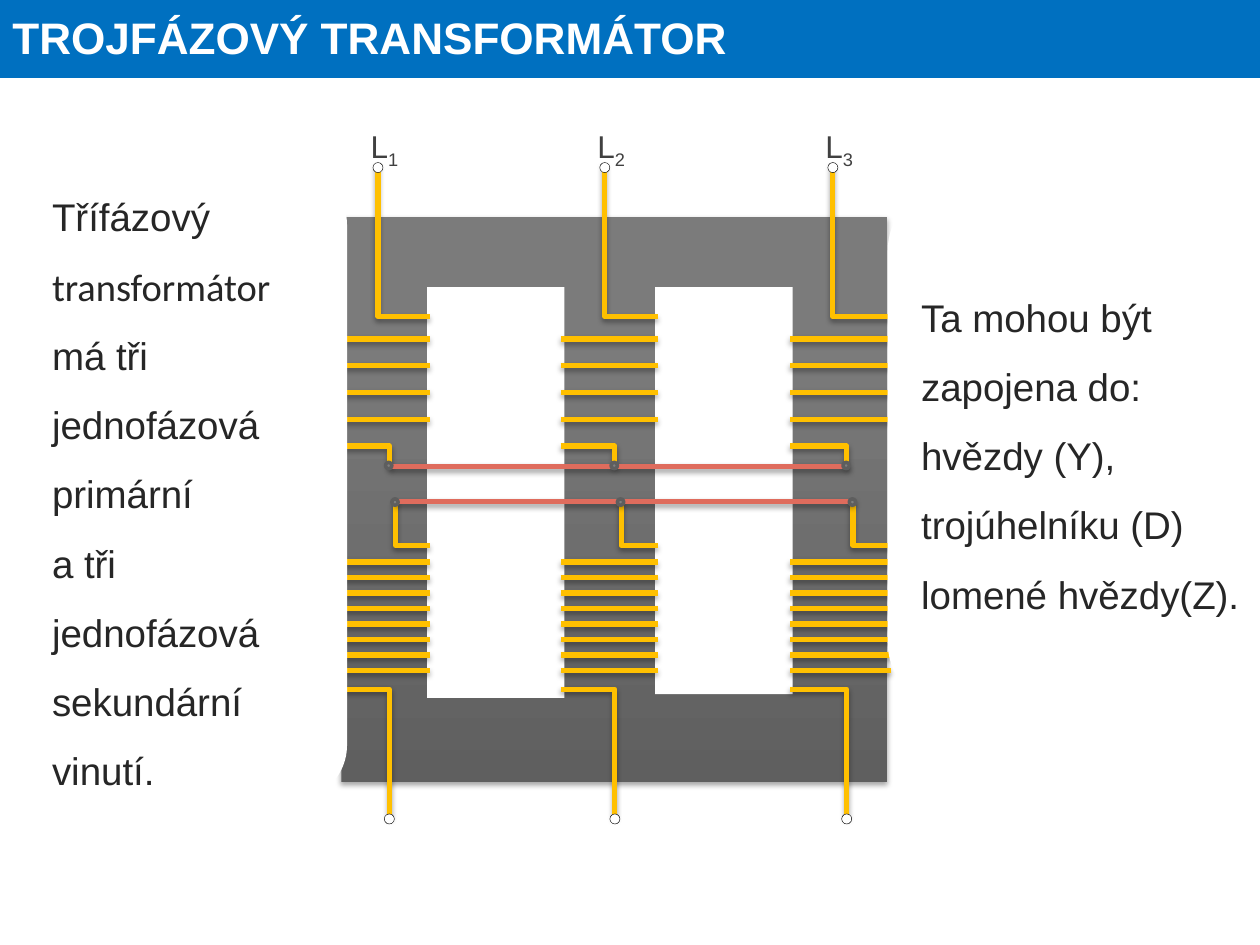
"""Build the slide about the windings of a three-phase transformer."""
from lxml.etree import SubElement
from pptx import Presentation
from pptx.dml.color import RGBColor
from pptx.enum.shapes import MSO_CONNECTOR, MSO_SHAPE
from pptx.enum.text import MSO_ANCHOR, PP_ALIGN
from pptx.oxml.ns import qn
from pptx.util import Inches, Pt

hex_color = RGBColor.from_string
COPPER, NEUTRAL, WHITE = "FFC000", "DF6C5D", "FFFFFF"

deck = Presentation()
deck.slide_width, deck.slide_height = Inches(10), Inches(7.5)
slide = deck.slides.add_slide(deck.slide_layouts[6])
shapes = slide.shapes


def add_block(kind, box, fill, outline=None, weight=0):
    block = shapes.add_shape(kind, *map(Inches, box))
    block.shadow.inherit = False
    block.fill.solid()
    block.fill.fore_color.rgb = hex_color(fill)
    if outline:
        block.line.color.rgb = hex_color(outline)
        block.line.width = Pt(weight)
    else:
        block.line.fill.background()
    return block


def cast_shadow(part):
    properties = part._element.spPr
    effects = properties.find(qn("a:effectLst"))
    if effects is None:
        effects = SubElement(properties, qn("a:effectLst"))
    outer = SubElement(effects, qn("a:outerShdw"), blurRad=str(Pt(3.1)),
                       dist=str(Pt(1.8)), dir="5400000", rotWithShape="0")
    tint = SubElement(outer, qn("a:srgbClr"), val="000000")
    SubElement(tint, qn("a:alpha"), val="35000")


core = add_block(MSO_SHAPE.RECTANGLE, (2.71, 1.72, 4.33, 4.49), "5F5F5F")
core.fill.gradient()
core.fill.gradient_angle = 90
for stop, color, position in zip(core.fill.gradient_stops, ("5F5F5F", "7B7B7B"), (0, 0.8)):
    stop.color.rgb = hex_color(color)
    stop.position = position
cast_shadow(core)
for left, height in ((3.39, 3.26), (5.2, 3.23)):
    add_block(MSO_SHAPE.RECTANGLE, (left, 2.28, 1.09, height), WHITE)

phases = [
    (2.67, 3.41, 3.0, 3.09, 3.14),
    (4.45, 5.22, 4.8, 4.88, 4.93),
    (6.27, 7.07, 6.61, 6.72, 6.77),
]
turn_rows = [2.69 + 0.213 * i for i in range(4)] + [4.46 + 0.123 * i for i in range(8)]
wires = []
for left, right, inlet, outlet, star in phases:
    wires += [(COPPER, [(left, y), (right, y)]) for y in turn_rows]
    wires += [
        (COPPER, [(right, 2.51), (inlet, 2.51), (inlet, 1.3)]),
        (COPPER, [(left, 3.54), (outlet, 3.54), (outlet, 3.71)]),
        (COPPER, [(right, 4.33), (star, 4.33), (star, 3.97)]),
        (COPPER, [(left, 5.47), (outlet, 5.47), (outlet, 6.49)]),
    ]
wires += [(NEUTRAL, [(3.09, 3.7), (6.74, 3.7)]), (NEUTRAL, [(3.13, 3.98), (6.79, 3.98)])]

for color, points in wires:
    start, *bends = [(Inches(x), Inches(y)) for x, y in points]
    if len(bends) == 1:
        wire = shapes.add_connector(MSO_CONNECTOR.STRAIGHT, *start, *bends[0])
    else:
        outline = shapes.build_freeform(*start)
        outline.add_line_segments(bends, close=False)
        wire = outline.convert_to_shape()
        wire.fill.background()
    wire.line.color.rgb = hex_color(color)
    wire.line.width = Pt(3)
    cast_shadow(wire)

for number, (left, right, inlet, outlet, star) in enumerate(phases, 1):
    for x, y in ((inlet, 1.33), (outlet, 6.5)):
        add_block(MSO_SHAPE.OVAL, (x - 0.04, y - 0.04, 0.08, 0.08), WHITE, "000000", 0.25)
    for x, y in ((outlet, 3.7), (star, 3.99)):
        add_block(MSO_SHAPE.OVAL, (x - 0.03, y - 0.03, 0.05, 0.05), "7F7F7F", "5E5E5E", 2)

    label = shapes.add_textbox(*map(Inches, (inlet - 0.26, 0.79, 0.62, 0.58))).text_frame
    label.word_wrap = False
    phase_name = label.paragraphs[0]
    phase_name.alignment = PP_ALIGN.CENTER
    phase_name.line_spacing = 1.5
    phase_name.space_before = Pt(5.8)
    phase_name.font.size = Pt(18)
    phase_name.font.name = "Arial"
    phase_name.font.color.rgb = hex_color("404040")
    phase_name.add_run().text = "L"
    subscript = phase_name.add_run()
    subscript.text = str(number)
    subscript._r.get_or_add_rPr().set("baseline", "-25000")

banner = add_block(MSO_SHAPE.RECTANGLE, (0, 0, 10, 0.6), "0070C0", "0070C0", 3).text_frame
banner.vertical_anchor = MSO_ANCHOR.BOTTOM
banner.margin_bottom = Inches(0.1)
banner.word_wrap = True
title = banner.paragraphs[0]
title.text = "TROJFÁZOVÝ TRANSFORMÁTOR"
title.alignment = PP_ALIGN.LEFT
title.font.size = Pt(25.2)
title.font.bold = True
title.font.name = "Arial"
title.font.color.rgb = hex_color(WHITE)

notes = [
    ((0.19, 1.36, 2.55, 4.98), [
        [("Třífázový ", "Arial"), ("transformátor", "Calibri"),
         (" má tři jednofázová primární ", "Arial")],
        [("a tři jednofázová sekundární vinutí.", "Arial")],
    ]),
    ((7.06, 1.47, 3.13, 4.15), [
        [(line, "Arial")] for line in
        ("Ta mohou být zapojena do:", "hvězdy (Y), ", "trojúhelníku (D) ", "lomené hvězdy(Z).")
    ]),
]
for box, lines in notes:
    frame = add_block(MSO_SHAPE.ROUNDED_RECTANGLE, box, WHITE, WHITE, 2).text_frame
    frame.word_wrap = True
    frame.vertical_anchor = MSO_ANCHOR.MIDDLE
    frame.margin_top, frame.margin_bottom = 0, Inches(0.05)
    note = frame.paragraphs[0]
    note.alignment = PP_ALIGN.LEFT
    note.line_spacing = 1.5
    note.font.size = Pt(22)
    note.font.color.rgb = hex_color("262626")
    for index, line in enumerate(lines):
        if index:
            note.add_line_break()
        for words, face in line:
            run = note.add_run()
            run.text = words
            run.font.name = face

deck.save("out.pptx")
